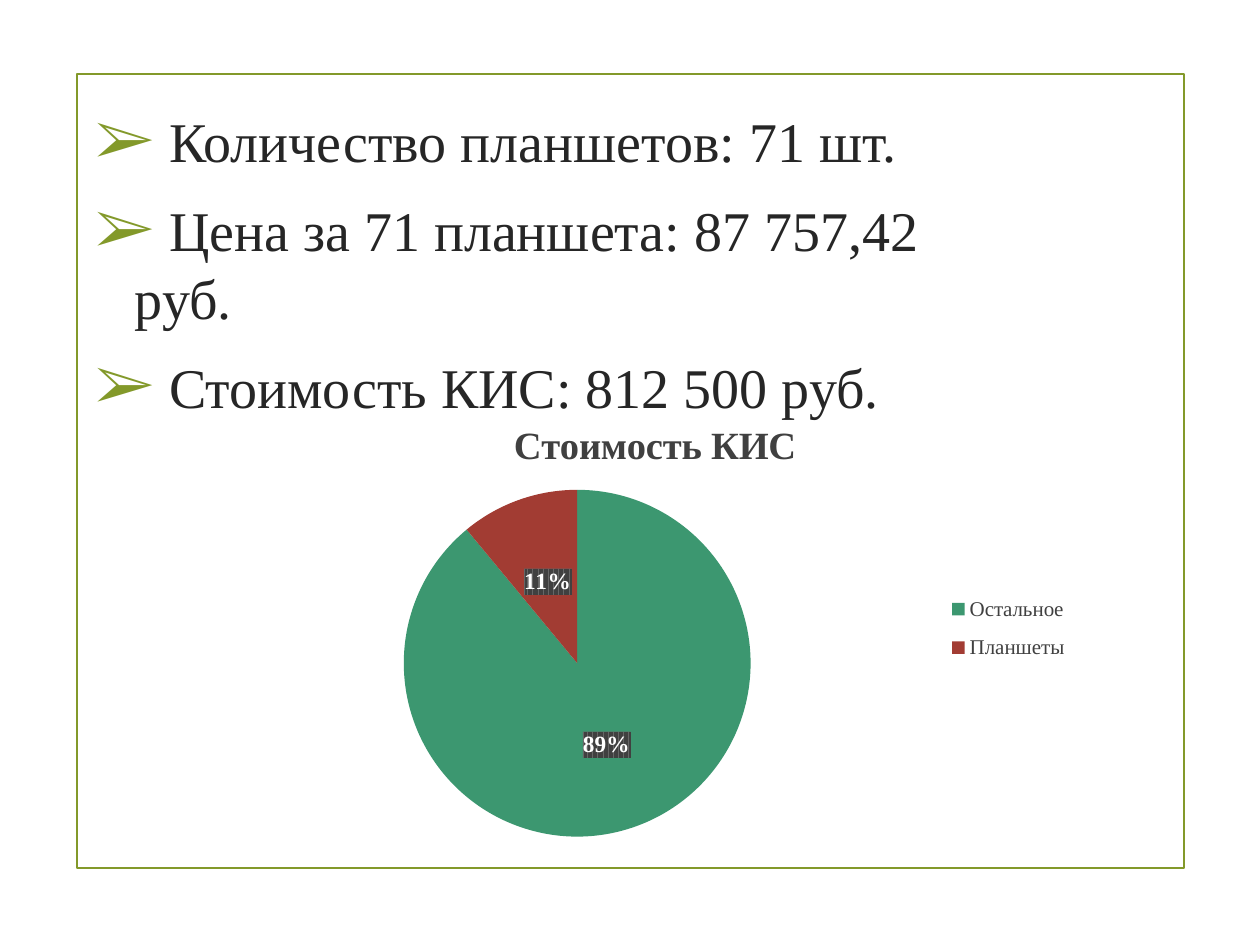
from dataclasses import dataclass

from lxml import etree
from pptx import Presentation
from pptx.chart.data import CategoryChartData
from pptx.dml.color import RGBColor
from pptx.enum.chart import XL_CHART_TYPE, XL_LABEL_POSITION, XL_LEGEND_POSITION
from pptx.enum.shapes import MSO_SHAPE
from pptx.oxml import parse_xml
from pptx.oxml.ns import nsdecls, qn
from pptx.util import Pt

PIE = XL_CHART_TYPE.PIE
RIGHT = XL_LEGEND_POSITION.RIGHT
CENTER = XL_LABEL_POSITION.CENTER
RECTANGLE = MSO_SHAPE.RECTANGLE

FONT = "Times New Roman"
ACCENT = "83992A"
DARK = "404040"


@dataclass
class Box:
    left: float
    top: float
    width: float
    height: float

    def points(self):
        return Pt(self.left), Pt(self.top), Pt(self.width), Pt(self.height)


@dataclass
class Slice:
    name: str
    percent: int
    color: str


FACTS = [
    " Количество планшетов: 71 шт.",
    " Цена за 71 планшета: 87 757,42 руб.",
    " Стоимость КИС: 812 500 руб.",
]
SLICES = [Slice("Остальное", 89, "3C9770"), Slice("Планшеты", 11, "A23C33")]
CHART_TITLE = "Стоимость КИС"


def color(hex_string: str) -> RGBColor:
    return RGBColor.from_string(hex_string)


def style_font(font, size: float, hex_string: str, bold: bool = False) -> None:
    font.name = FONT
    font.size = Pt(size)
    font.bold = bold
    font.color.rgb = color(hex_string)


def add_frame(slide, box: Box) -> None:
    shape = slide.shapes.add_shape(RECTANGLE, *box.points())
    shape.shadow.inherit = False
    shape.fill.background()
    shape.line.color.rgb = color(ACCENT)
    shape.line.width = Pt(1.25)


def add_bullet(paragraph) -> None:
    properties = paragraph._p.get_or_add_pPr()
    properties.set("marL", str(Pt(22.5)))
    properties.set("indent", str(Pt(-22.5)))
    bullet_color = etree.SubElement(properties, qn("a:buClr"))
    etree.SubElement(bullet_color, qn("a:srgbClr"), val=ACCENT)
    etree.SubElement(properties, qn("a:buSzPct"), val="115000")
    etree.SubElement(properties, qn("a:buFont"), typeface=FONT)
    etree.SubElement(properties, qn("a:buChar"), char="➢")


def add_facts(slide, box: Box, facts: list[str]) -> None:
    text_frame = slide.shapes.add_textbox(*box.points()).text_frame
    text_frame.word_wrap = True
    text_frame.text = "\n".join(facts)
    for index, paragraph in enumerate(text_frame.paragraphs):
        add_bullet(paragraph)
        paragraph.space_before = Pt(6.4 if index else 0)
        paragraph.space_after = Pt(6)
        for run in paragraph.runs:
            style_font(run.font, 32, "262626")


def place_part(part, x: float, y: float, size=None, inner: bool = False) -> None:
    """Place a chart part by fractions of the chart's size."""
    values = [("xMode", "edge"), ("yMode", "edge"), ("x", x), ("y", y)]
    if inner:
        values.insert(0, ("layoutTarget", "inner"))
    if size:
        values += [("w", size[0]), ("h", size[1])]
    for old in part.findall(qn("c:layout")):
        part.remove(old)
    layout = etree.Element(qn("c:layout"))
    manual = etree.SubElement(layout, qn("c:manualLayout"))
    for name, value in values:
        etree.SubElement(manual, qn(f"c:{name}"), val=str(value))
    # The layout follows the title text or the legend position
    before = part.find(qn("c:tx"))
    if before is None:
        before = part.find(qn("c:legendPos"))
    if before is None:
        part.insert(0, layout)
    else:
        before.addnext(layout)


def style_labels(labels) -> None:
    labels.show_percentage = True
    labels.show_value = False
    labels.number_format = "0%"
    labels.number_format_is_linked = False
    labels.position = CENTER
    style_font(labels.font, 13.3, "FFFFFF", bold=True)
    background = parse_xml(
        f'<c:spPr {nsdecls("c", "a")}><a:pattFill prst="dkVert">'
        f'<a:fgClr><a:srgbClr val="{DARK}"/></a:fgClr>'
        '<a:bgClr><a:srgbClr val="666666"/></a:bgClr></a:pattFill></c:spPr>'
    )
    labels._element.find(qn("c:txPr")).addprevious(background)


def add_pie(slide, box: Box, title: str, slices: list[Slice]) -> None:
    data = CategoryChartData()
    data.categories = [item.name for item in slices]
    data.add_series(title, [item.percent for item in slices])
    chart = slide.shapes.add_chart(PIE, *box.points(), data).chart
    style_font(chart.font, 10, "000000")

    # Title
    chart.has_title = True
    chart.chart_title.text_frame.text = title
    for run in chart.chart_title.text_frame.paragraphs[0].runs:
        style_font(run.font, 22, DARK, bold=True)
    place_part(chart.chart_title._element, 0.35, 0.05)

    # Legend
    chart.has_legend = True
    chart.legend.position = RIGHT
    chart.legend.include_in_layout = False
    style_font(chart.legend.font, 12, DARK)
    place_part(chart.legend._element, 0.81, 0.41, (0.15, 0.2))

    # Slices and their labels
    plot = chart.plots[0]
    plot.vary_by_categories = True
    series = plot.series[0]
    for index, item in enumerate(slices):
        fill = series.points[index].format.fill
        fill.solid()
        fill.fore_color.rgb = color(item.color)
    style_labels(series.data_labels)
    plot_area = chart._chartSpace.find(f".//{qn('c:plotArea')}")
    place_part(plot_area, 0.24, 0.21, (0.37, 0.75), inner=True)


def main() -> None:
    presentation = Presentation()
    presentation.slide_width = Pt(720)
    presentation.slide_height = Pt(540)
    slide = presentation.slides.add_slide(presentation.slide_layouts[6])
    add_frame(slide, Box(43.9, 42.5, 632.9, 453.6))
    add_facts(slide, Box(47.5, 57.6, 535.7, 191.5), FACTS)
    add_pie(slide, Box(102.2, 223.2, 535.7, 266.4), CHART_TITLE, SLICES)
    presentation.save("out.pptx")


if __name__ == "__main__":
    main()
